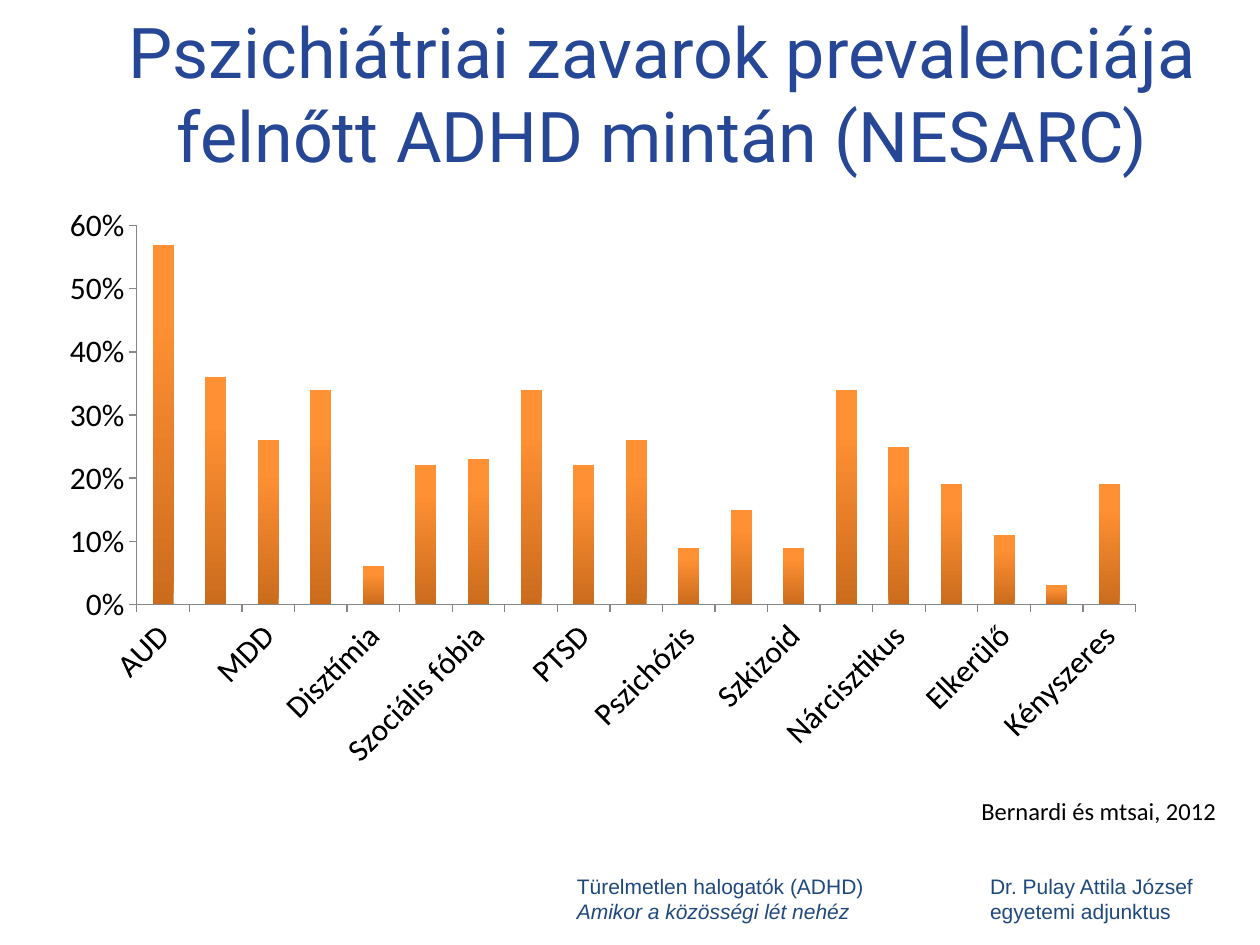
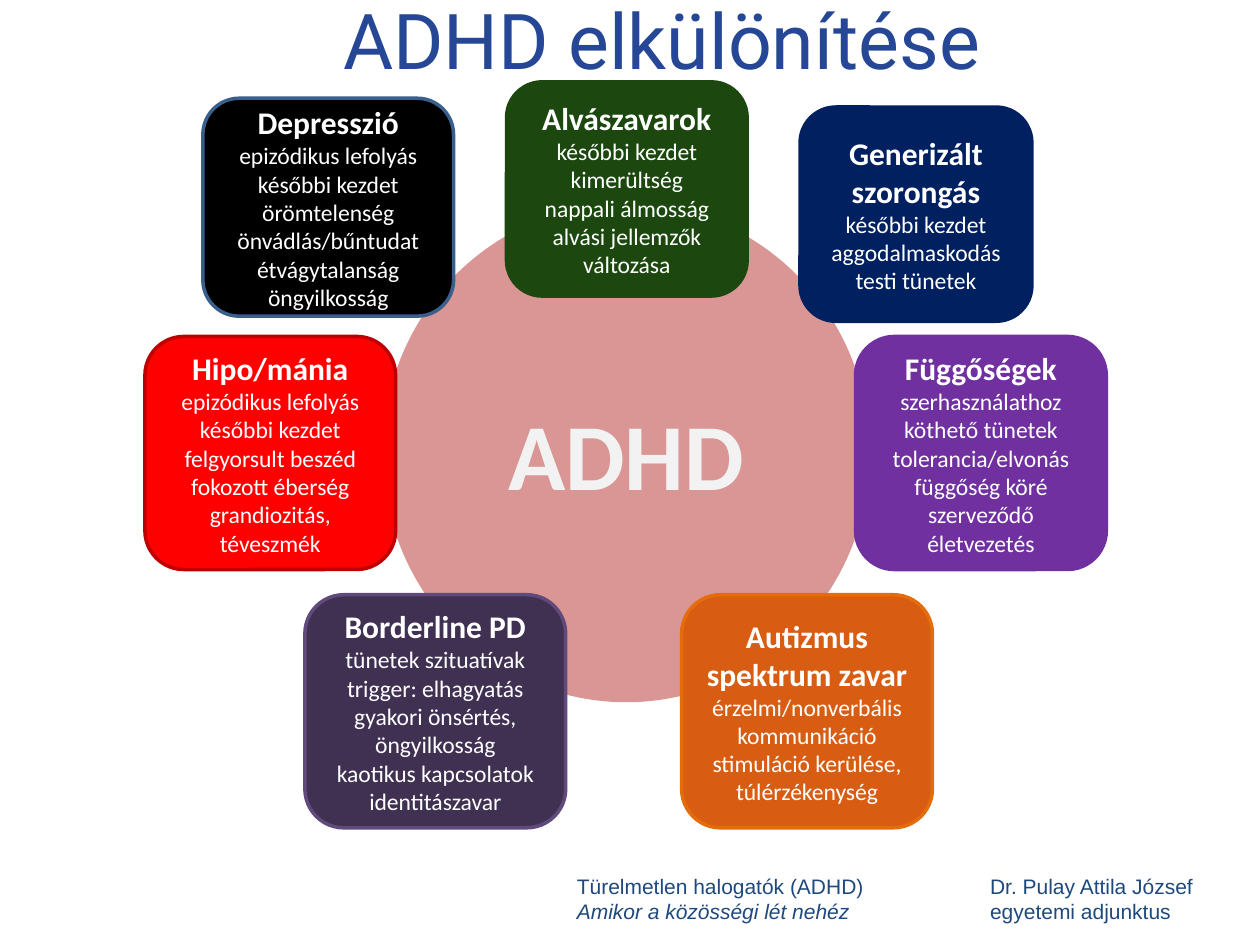
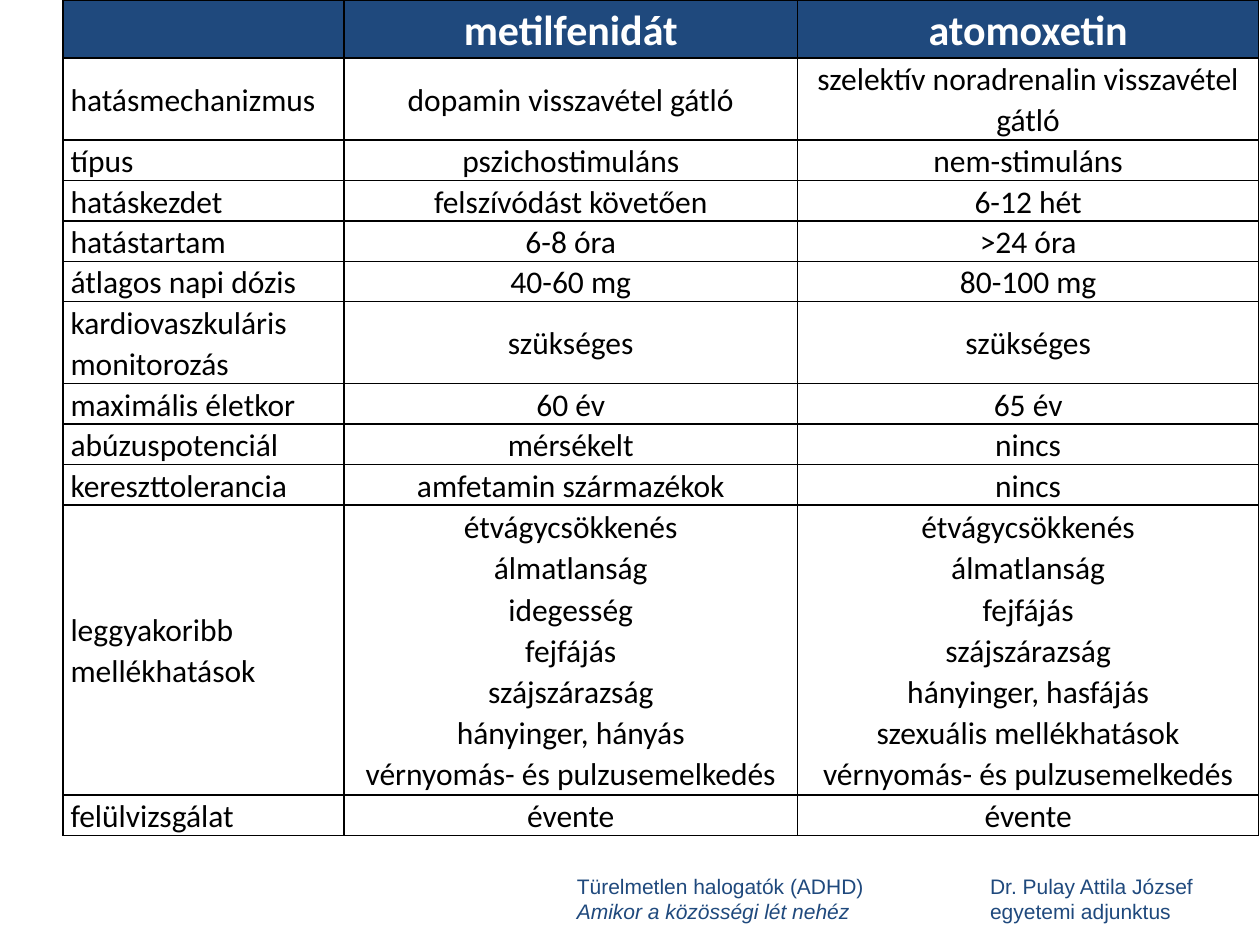
from lxml.etree import SubElement
from pptx import Presentation
from pptx.chart.data import CategoryChartData
from pptx.dml.color import RGBColor
from pptx.enum.chart import XL_CHART_TYPE, XL_TICK_MARK
from pptx.enum.shapes import MSO_SHAPE
from pptx.enum.text import MSO_ANCHOR, PP_ALIGN
from pptx.oxml import parse_xml
from pptx.oxml.ns import nsdecls, qn
from pptx.util import Inches, Pt

NAVY = "1F497D"
TITLE_BLUE = "264796"
BLACK = "000000"
WHITE = "FFFFFF"
AXIS_GREY = "868686"


def color(hex_text):
    return RGBColor.from_string(hex_text)


def style(paragraph, face, size, hex_text, align=PP_ALIGN.LEFT, bold=False):
    paragraph.alignment = align
    paragraph.font.name = face
    paragraph.font.size = Pt(size)
    paragraph.font.bold = bold
    paragraph.font.color.rgb = color(hex_text)


prs = Presentation()
prs.slide_width, prs.slide_height = Inches(10), Inches(7.5)
title_only, blank = prs.slide_layouts[5], prs.slide_layouts[6]

prevalence = prs.slides.add_slide(title_only)
differential = prs.slides.add_slide(title_only)
medication = prs.slides.add_slide(blank)

# Footers, moved to the master so that every slide shows them
FOOTERS = [
    (4.48, 3.16, "Türelmetlen halogatók (ADHD)", "Amikor a közösségi lét nehéz", True),
    (7.76, 2.24, "Dr. Pulay Attila József", "egyetemi adjunktus", False),
]
for number, (left, width, upper, lower, slanted) in enumerate(FOOTERS):
    footer = prevalence.shapes.add_textbox(
        Inches(left), Inches(6.88), Inches(width), Inches(0.5))
    footer.text_frame.word_wrap = True
    footer.text_frame.text = f"{upper}\n{lower}"
    for paragraph in footer.text_frame.paragraphs:
        style(paragraph, "Arial", 12, NAVY)
    footer.text_frame.paragraphs[1].font.italic = slanted
    footer.element.nvSpPr.cNvPr.set("id", str(100 + number))
    prs.slide_master.shapes.element.append(footer.element)

# Titles
TITLES = [
    (prevalence, "Pszichiátriai zavarok prevalenciája felnőtt ADHD mintán (NESARC)",
     0, 1.47, 40),
    (differential, "ADHD elkülönítése", -0.03, 0.68, 44),
]
for slide, wording, top, height, size in TITLES:
    title = slide.shapes.title
    title.left, title.top = Inches(0.51), Inches(top)
    title.width, title.height = Inches(9.49), Inches(height)
    title.text_frame.text = wording
    title.text_frame.vertical_anchor = MSO_ANCHOR.MIDDLE
    style(title.text_frame.paragraphs[0], "Roboto", size, TITLE_BLUE, PP_ALIGN.CENTER)

# Slide 1: prevalence chart
PREVALENCE = {
    "AUD": 0.57, "DUD": 0.36, "MDD": 0.26, "Bipoláris": 0.34, "Disztímia": 0.06,
    "Pánikzavar": 0.22, "Szociális fóbia": 0.23, "Fóbia": 0.34, "PTSD": 0.22,
    "GAD": 0.26, "Pszichózis": 0.09, "Paranoid": 0.15, "Szkizoid": 0.09,
    "Borderline": 0.34, "Nárcisztikus": 0.25, "Antiszociális": 0.19,
    "Elkerülő": 0.11, "Dependens": 0.03, "Kényszeres": 0.19,
}
disorders = CategoryChartData(number_format="0%")
disorders.categories = list(PREVALENCE)
disorders.add_series("Series 1", list(PREVALENCE.values()))
chart = prevalence.shapes.add_chart(
    XL_CHART_TYPE.COLUMN_CLUSTERED,
    Inches(0.51), Inches(1.64), Inches(8.73), Inches(5.03), disorders).chart
chart.has_legend = False
chart.has_title = False
chart.font.name = "Calibri"
chart.font.size = Pt(18)
chart.font.color.rgb = color(BLACK)

for axis in (chart.category_axis, chart.value_axis):
    axis.has_major_gridlines = False
    axis.major_tick_mark = XL_TICK_MARK.OUTSIDE
    axis.minor_tick_mark = XL_TICK_MARK.NONE
    axis.format.line.color.rgb = color(AXIS_GREY)
    axis.tick_labels.font.name = "Calibri"
    axis.tick_labels.font.size = Pt(18)
    axis.tick_labels.font.color.rgb = color(BLACK)
chart.value_axis.minimum_scale = 0
chart.value_axis.maximum_scale = 0.6
chart.value_axis.major_unit = 0.1
chart.value_axis.tick_labels.number_format = "0%"
chart.value_axis.tick_labels.number_format_is_linked = False

columns = chart.plots[0]
columns.gap_width = 150
columns.vary_by_categories = False
column_fill = columns.series[0].format.fill
column_fill.gradient()
column_fill.gradient_angle = 90
for stop, (position, shade) in zip(
        column_fill.gradient_stops, [(0, "CB6C1D"), (0.8, "FF9033")]):
    stop.position = position
    stop.color.rgb = color(shade)

# Slanted category labels and a fixed inner plot area
chart.element.xpath("c:chart/c:plotArea/c:catAx/c:txPr/a:bodyPr")[0].set("rot", "-2700000")
plot_area = chart.element.xpath("c:chart/c:plotArea")[0]
for automatic in plot_area.xpath("c:layout"):
    plot_area.remove(automatic)
layout = parse_xml(f"<c:layout {nsdecls('c')}><c:manualLayout/></c:layout>")
LAYOUT = [("layoutTarget", "inner"), ("xMode", "edge"), ("yMode", "edge"),
          ("x", "0.066"), ("y", "0.023"), ("w", "0.908"), ("h", "0.602")]
for tag, value in LAYOUT:
    SubElement(layout[0], qn(f"c:{tag}")).set("val", value)
plot_area.insert(0, layout)

citation = prevalence.shapes.add_textbox(
    Inches(7.28), Inches(6.27), Inches(2.47), Inches(0.34))
citation.text_frame.word_wrap = True
citation.text_frame.text = "Bernardi és mtsai, 2012"
style(citation.text_frame.paragraphs[0], "Calibri", 14, BLACK, PP_ALIGN.RIGHT)

# Slide 2: ADHD in the centre, the disorders to tell apart around it
# Each entry: place, fill, outline, heading, features
OVAL, ROUNDED = MSO_SHAPE.OVAL, MSO_SHAPE.ROUNDED_RECTANGLE
CONDITIONS = [
    (OVAL, (3.05, 1.63, 3.84, 3.93), "D99694", "D99694", "ADHD", []),
    (ROUNDED, (1.61, 0.78, 1.99, 1.73), "000000", "3A5F8C", "Depresszió",
     ["epizódikus lefolyás", "későbbi kezdet", "örömtelenség",
      "önvádlás/bűntudat", "étvágytalanság", "öngyilkosság"]),
    (ROUNDED, (1.15, 2.67, 1.99, 1.85), "FF0000", "C00000", "Hipo/mánia",
     ["epizódikus lefolyás", "későbbi kezdet", "felgyorsult beszéd",
      "fokozott éberség", "grandiozitás, téveszmék"]),
    (ROUNDED, (6.79, 2.67, 1.99, 1.85), "7030A0", "7030A0", "Függőségek",
     ["szerhasználathoz köthető tünetek", "tolerancia/elvonás",
      "függőség köré szerveződő életvezetés"]),
    (ROUNDED, (6.35, 0.85, 1.84, 1.7), "002060", "002060", "Generizált szorongás",
     ["későbbi kezdet", "aggodalmaskodás", "testi tünetek"]),
    (ROUNDED, (4.02, 0.65, 1.91, 1.7), "1C4810", "1C4810", "Alvászavarok",
     ["későbbi kezdet", "kimerültség", "nappali álmosság",
      "alvási jellemzők változása"]),
    (ROUNDED, (2.42, 4.72, 2.07, 1.85), "403152", "604A7B", "Borderline PD",
     ["tünetek szituatívak", "trigger: elhagyatás",
      "gyakori önsértés, öngyilkosság", "kaotikus kapcsolatok identitászavar"]),
    (ROUNDED, (5.41, 4.72, 1.99, 1.85), "D85D12", "E46C0A", "Autizmus spektrum zavar",
     ["érzelmi/nonverbális kommunikáció", "stimuláció kerülése, túlérzékenység"]),
]
for outline, place, fill, edge, heading, features in CONDITIONS:
    condition = differential.shapes.add_shape(outline, *map(Inches, place))
    condition.shadow.inherit = False
    condition.fill.solid()
    condition.fill.fore_color.rgb = color(fill)
    condition.line.color.rgb = color(edge)
    condition.line.width = Pt(2)
    frame = condition.text_frame
    frame.word_wrap = True
    frame.vertical_anchor = MSO_ANCHOR.MIDDLE
    frame.text = "\n".join([heading, *features])
    for paragraph in frame.paragraphs:
        style(paragraph, "Calibri", 13.5, WHITE, PP_ALIGN.CENTER)
    if outline == OVAL:
        style(frame.paragraphs[0], "Calibri", 54, "F2F2F2", PP_ALIGN.CENTER, True)
    else:
        style(frame.paragraphs[0], "Calibri", 18, WHITE, PP_ALIGN.CENTER, True)

# Slide 3: comparison of the two medicines
COMPARISON = [
    ("", "metilfenidát", "atomoxetin"),
    ("hatásmechanizmus", "dopamin visszavétel gátló",
     "szelektív noradrenalin visszavétel gátló"),
    ("típus", "pszichostimuláns", "nem-stimuláns"),
    ("hatáskezdet", "felszívódást követően", "6-12 hét"),
    ("hatástartam", "6-8 óra", ">24 óra"),
    ("átlagos napi dózis", "40-60 mg", "80-100 mg"),
    ("kardiovaszkuláris monitorozás", "szükséges", "szükséges"),
    ("maximális életkor", "60 év", "65 év"),
    ("abúzuspotenciál", "mérsékelt", "nincs"),
    ("kereszttolerancia", "amfetamin származékok", "nincs"),
    ("leggyakoribb mellékhatások",
     "étvágycsökkenés\nálmatlanság\nidegesség\nfejfájás\nszájszárazság\n"
     "hányinger, hányás\nvérnyomás- és pulzusemelkedés",
     "étvágycsökkenés\nálmatlanság\nfejfájás\nszájszárazság\nhányinger, hasfájás\n"
     "szexuális mellékhatások\nvérnyomás- és pulzusemelkedés"),
    ("felülvizsgálat", "évente", "évente"),
]
WIDTHS = [2.23, 3.6, 3.66]
SINGLE_ROW = 0.32
TALL_ROWS = {0: 0.46, 1: 0.65, 6: 0.65, 10: 2.3}

comparison = medication.shapes.add_table(
    len(COMPARISON), len(WIDTHS), Inches(0.5), Inches(0), Inches(9.49), Inches(6.62)).table
comparison.horz_banding = False
for column, width in zip(comparison.columns, WIDTHS):
    column.width = Inches(width)

for r, entries in enumerate(COMPARISON):
    comparison.rows[r].height = Inches(TALL_ROWS.get(r, SINGLE_ROW))
    for c, entry in enumerate(entries):
        cell = comparison.cell(r, c)
        cell.text = entry
        cell.vertical_anchor = MSO_ANCHOR.MIDDLE
        cell.margin_left = cell.margin_right = Inches(0.06)
        cell.margin_top = cell.margin_bottom = 0
        align = PP_ALIGN.CENTER if c else PP_ALIGN.LEFT
        for paragraph in cell.text_frame.paragraphs:
            paragraph.line_spacing = 1.07
            if r == 0:
                style(paragraph, "Calibri", 24, WHITE, align, True)
            else:
                style(paragraph, "Calibri", 18, BLACK, align)
        # Borders come before the fill in the cell properties
        properties = cell._tc.get_or_add_tcPr()
        for side in ("lnL", "lnR", "lnT", "lnB"):
            border = SubElement(properties, qn(f"a:{side}"), w=str(Pt(1)))
            ink = SubElement(border, qn("a:solidFill"))
            SubElement(ink, qn("a:srgbClr"), val=BLACK)
        if r == 0:
            cell.fill.solid()
            cell.fill.fore_color.rgb = color(NAVY)
        else:
            cell.fill.background()

prs.save("out.pptx")
